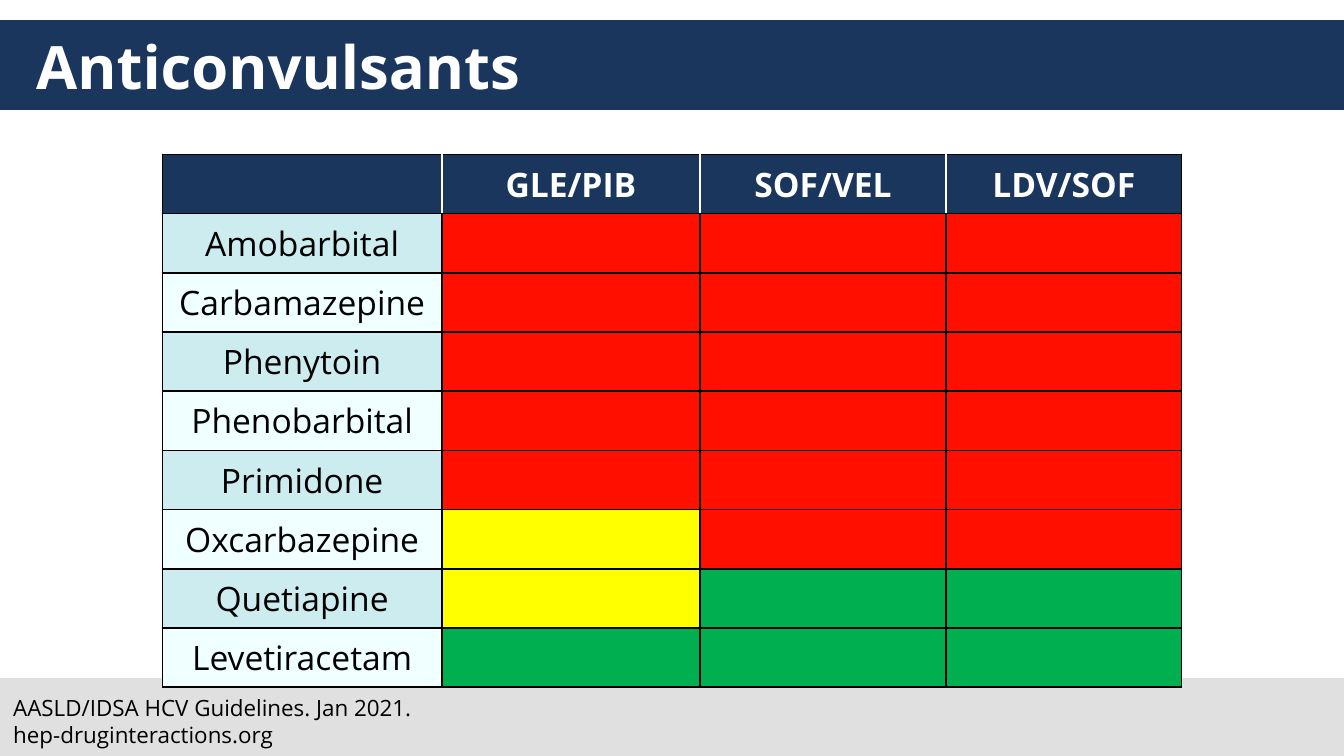
import pptx
import pptx.util
import pptx.dml.color
import pptx.enum.shapes
import pptx.enum.text
import pptx.oxml
import pptx.oxml.ns
from dataclasses import dataclass

Cm = pptx.util.Cm
Pt = pptx.util.Pt
Align = pptx.enum.text.PP_ALIGN
Anchor = pptx.enum.text.MSO_ANCHOR


@dataclass(frozen=True)
class Theme:
    face: str = "Open Sans"
    navy: str = "1B365D"
    gray: str = "E0E0E0"
    white: str = "FFFFFF"
    black: str = "000000"
    tint: str = "CDECEF"
    pale: str = "F0FFFF"
    red: str = "FF0F00"
    yellow: str = "FFFF00"
    green: str = "00B050"
    title: int = 32
    body: int = 18
    note: int = 12


theme = Theme()


def style(para, size, color, bold=False, align=Align.LEFT):
    para.alignment = align
    font = para.font
    font.name, font.size, font.bold = theme.face, Pt(size), bold
    font.color.rgb = pptx.dml.color.RGBColor.from_string(color)


def paint(fill, color):
    fill.solid()
    fill.fore_color.rgb = pptx.dml.color.RGBColor.from_string(color)


deck = pptx.Presentation()
deck.slide_width, deck.slide_height = Cm(25.4), Cm(14.29)
slide = deck.slides.add_slide(deck.slide_layouts[5])
shapes = slide.shapes

for top, height, color in ((0.38, 1.7, theme.navy), (12.82, 1.47, theme.gray)):
    band = shapes.add_shape(pptx.enum.shapes.MSO_SHAPE.RECTANGLE,
                            0, Cm(top), deck.slide_width, Cm(height))
    band.shadow.inherit = False
    paint(band.fill, color)
    band.line.fill.background()
    shapes._spTree.insert(2, band._element)

title = shapes.title
title.left, title.top, title.width, title.height = Cm(0.43), Cm(0.38), Cm(24.56), Cm(1.73)
frame = title.text_frame
frame.text = "Anticonvulsants"
frame.auto_size = pptx.enum.text.MSO_AUTO_SIZE.NONE
frame.vertical_anchor = Anchor.MIDDLE
style(frame.paragraphs[0], theme.title, theme.white, True)

heads = ["", "GLE/PIB", "SOF/VEL", "LDV/SOF"]
drugs = [
    ("Amobarbital", "RRR"),
    ("Carbamazepine", "RRR"),
    ("Phenytoin", "RRR"),
    ("Phenobarbital", "RRR"),
    ("Primidone", "RRR"),
    ("Oxcarbazepine", "YRR"),
    ("Quetiapine", "YGG"),
    ("Levetiracetam", "GGG"),
]
risk = {"R": theme.red, "Y": theme.yellow, "G": theme.green}
widths = [5.28, 4.88, 4.65, 4.45]
rows = [[(head, theme.navy) for head in heads]]
for num, (drug, marks) in enumerate(drugs):
    shade = theme.pale if num % 2 else theme.tint
    rows.append([(drug, shade)] + [("", risk[mark]) for mark in marks])

step = 1.03
table = shapes.add_table(len(rows), len(heads), Cm(3.07), Cm(2.92),
                         Cm(sum(widths)), Cm(step * len(rows))).table
table.horz_banding = False
for col, width in zip(table.columns, widths):
    col.width = Cm(width)
for r, row in enumerate(rows):
    table.rows[r].height = Cm(step)
    for c, (text, color) in enumerate(row):
        cell = table.cell(r, c)
        cell.vertical_anchor = Anchor.MIDDLE
        cell.text = text
        style(cell.text_frame.paragraphs[0], theme.body,
              theme.black if r else theme.white, r == 0, Align.CENTER)
        inner = {"L": c > 0, "R": c < len(heads) - 1}
        for side in "LRTB":
            edge = theme.white if r == 0 and inner.get(side) else theme.black
            cell._tc.get_or_add_tcPr().append(pptx.oxml.parse_xml(
                f'<a:ln{side} {pptx.oxml.ns.nsdecls("a")} w="{Pt(1)}"><a:solidFill>'
                f'<a:srgbClr val="{edge}"/></a:solidFill></a:ln{side}>'))
        paint(cell.fill, color)

source = shapes.add_textbox(0, Cm(13), Cm(9.32), Cm(1.27)).text_frame
source.word_wrap = True
source.text = "AASLD/IDSA HCV Guidelines. Jan 2021.\nhep-druginteractions.org"
for para in source.paragraphs:
    style(para, theme.note, theme.black)

deck.save("out.pptx")
